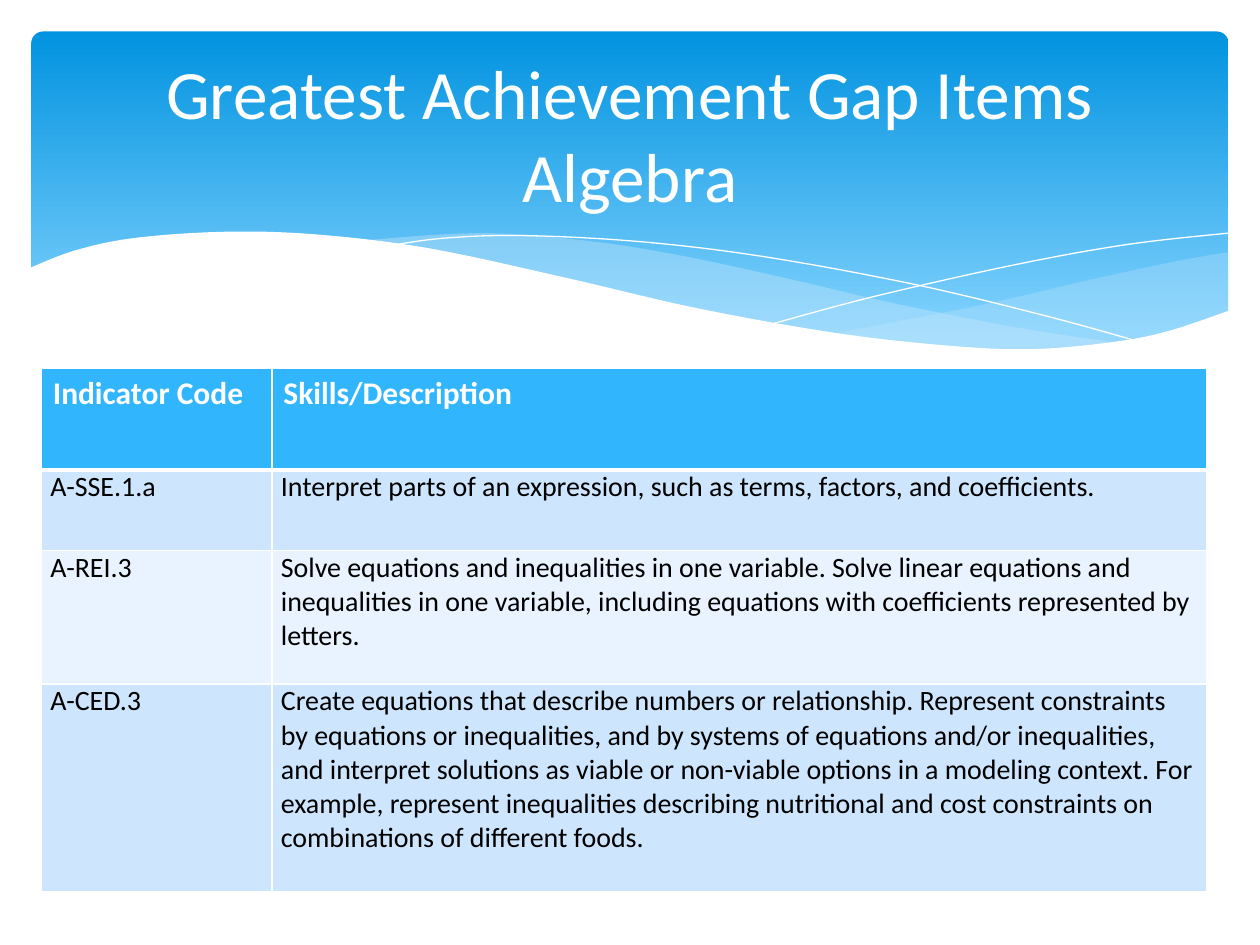
from pptx import Presentation
from pptx.dml.color import RGBColor
from pptx.enum.shapes import MSO_SHAPE
from pptx.enum.text import MSO_ANCHOR, PP_ALIGN
from pptx.oxml.ns import qn
from pptx.util import Inches, Pt
from lxml.etree import SubElement

WIDE, HIGH = 10, 7.5
FONT = "Calibri"
WHITE, BLACK, PALE = "FFFFFF", "000000", "C6E7FC"
HEAD, BANDS = "31B6FD", ("CEE5FE", "E8F3FF")
TITLE = ("Greatest Achievement Gap Items", "Algebra")
ROWS = [
    ("Indicator Code", "Skills/Description"),
    ("A-SSE.1.a", "Interpret parts of an expression, such as terms, factors, and coefficients."),
    ("A-REI.3", "Solve equations and inequalities in one variable. Solve linear equations and "
                "inequalities in one variable, including equations with coefficients "
                "represented by letters."),
    ("A-CED.3", "Create equations that describe numbers or relationship. Represent constraints "
                "by equations or inequalities, and by systems of equations and/or inequalities, "
                "and interpret solutions as viable or non-viable options in a modeling context. "
                "For example, represent inequalities describing nutritional and cost constraints "
                "on combinations of different foods."),
]
COLS = (1.83, 7.42)
TALL = (0.81, 0.64, 1.06, 1.65)

FILLS = [
    (PALE, 29, [
        [(9.76, 2), (9.35, 2.07), (8.61, 2.23), (7.79, 2.42), (6.61, 2.65)],
        [(6.61, 2.65), (7.19, 2.72), (8.03, 2.78), (8.81, 2.73), (9.35, 2.62), (9.76, 2.47)]]),
    (PALE, 40, [
        [(8.93, 2.73), (8.07, 2.6), (7.06, 2.4), (6.29, 2.22), (5.41, 2.03), (4.65, 1.91),
         (3.8, 1.85), (2.86, 1.91)],
        [(2.86, 1.91), (3.62, 2.03), (4.49, 2.22), (5.66, 2.48), (6.5, 2.64), (7.22, 2.74),
         (8.07, 2.78), (8.93, 2.73)]]),
]
LINES = [
    [(3.09, 1.95), (3.53, 1.89), (4.16, 1.87), (5.1, 1.92), (6.08, 2.04), (7.27, 2.26),
     (8.31, 2.51), (9.07, 2.72)],
    [(6.13, 2.57), (6.95, 2.35), (8.06, 2.1), (8.95, 1.94), (9.75, 1.85)],
]
FRONT = (WHITE, 100, [
    [(0.23, 2.13), (0.59, 1.99), (1.06, 1.89), (1.77, 1.84), (2.5, 1.86), (3.4, 1.97),
     (4.47, 2.2), (5.55, 2.45), (6.68, 2.65), (7.61, 2.75), (8.23, 2.77), (8.87, 2.71),
     (9.3, 2.62), (9.77, 2.46)],
    [(9.77, 3.29), (0.23, 3.29)]])


def tint(code):
    return RGBColor.from_string(code)


def smooth(knots, steps=6):
    if len(knots) < 3:
        return knots
    ends = [knots[0], *knots, knots[-1]]
    curve = [knots[0]]
    for a, b, c, d in zip(ends, ends[1:], ends[2:], ends[3:]):
        for n in range(1, steps + 1):
            t = n / steps
            curve.append(tuple(
                (2 * q + (r - p) * t + (2 * p - 5 * q + 4 * r - s) * t ** 2
                 + (3 * q - p - 3 * r + s) * t ** 3) / 2
                for p, q, r, s in zip(a, b, c, d)))
    return curve


def outline(slide, edges, close):
    dots = [(Inches(x), Inches(y)) for edge in edges for x, y in smooth(edge)]
    pen = slide.shapes.build_freeform(*dots[0])
    pen.add_line_segments(dots[1:], close=close)
    shape = pen.convert_to_shape()
    shape.shadow.inherit = False
    return shape


def wave(slide, code, alpha, edges):
    shape = outline(slide, edges, True)
    shape.line.fill.background()
    shape.fill.solid()
    shape.fill.fore_color.rgb = tint(code)
    if alpha < 100:
        mark = shape.fill._xPr.find(".//" + qn("a:srgbClr"))
        SubElement(mark, qn("a:alpha"), val=str(alpha * 1000))


def thread(slide, knots):
    shape = outline(slide, [knots], False)
    shape.fill.background()
    shape.line.color.rgb = tint(WHITE)
    shape.line.width = Pt(0)


def banner(slide):
    edge = WIDE / 40
    shape = slide.shapes.add_shape(
        MSO_SHAPE.ROUNDED_RECTANGLE, Inches(edge), Inches(edge),
        Inches(WIDE - 2 * edge), Inches(HIGH * 0.36))
    shape.adjustments[0] = 0.034
    shape.shadow.inherit = False
    shape.line.fill.background()
    shape.fill.gradient()
    shape.fill.gradient_angle = 270
    for stop, place, code in zip(shape.fill.gradient_stops, (0, 0.9), ("0293E0", "83D3FE")):
        stop.position = place
        stop.color.rgb = tint(code)


def write(para, text, size, code, bold=False):
    run = para.add_run()
    run.text = text
    run.font.name, run.font.size, run.font.bold = FONT, Pt(size), bold
    run.font.color.rgb = tint(code)


def border(cell, widths):
    props = cell._tc.get_or_add_tcPr()
    for side, width in zip("LRTB", widths):
        line = SubElement(props, qn("a:ln" + side), w=str(Pt(width)))
        paint = SubElement(line, qn("a:solidFill"))
        SubElement(paint, qn("a:srgbClr"), val=WHITE)


def grid(slide):
    table = slide.shapes.add_table(
        len(ROWS), len(COLS), Inches(0.33), Inches(2.92),
        Inches(sum(COLS)), Inches(sum(TALL))).table
    for col, width in zip(table.columns, COLS):
        col.width = Inches(width)
    for i, texts in enumerate(ROWS):
        table.rows[i].height = Inches(TALL[i])
        top = i == 0
        for j, text in enumerate(texts):
            cell = table.cell(i, j)
            border(cell, (1, 1, 3 if i == 1 else 1, 3 if top else 1))
            cell.fill.solid()
            cell.fill.fore_color.rgb = tint(HEAD if top else BANDS[(i - 1) % 2])
            cell.margin_left = cell.margin_right = Inches(0.09 if top else 0.07)
            cell.margin_top = cell.margin_bottom = Inches(0.05 if top else 0)
            write(cell.text_frame.paragraphs[0], text, 18 if top else 16,
                  WHITE if top else BLACK, top)


def title(slide):
    frame = slide.shapes.add_textbox(
        Inches(WIDE * 0.05), Inches(0.37), Inches(WIDE * 0.9), Inches(1.37)).text_frame
    frame.word_wrap = True
    frame.vertical_anchor = MSO_ANCHOR.MIDDLE
    para = frame.paragraphs[0]
    para.alignment = PP_ALIGN.CENTER
    for n, text in enumerate(TITLE):
        if n:
            para.add_line_break()
        write(para, text, 39.6, WHITE)


def main():
    deck = Presentation()
    deck.slide_width, deck.slide_height = Inches(WIDE), Inches(HIGH)
    slide = deck.slides.add_slide(deck.slide_layouts[6])
    banner(slide)
    for item in FILLS:
        wave(slide, *item)
    for knots in LINES:
        thread(slide, knots)
    wave(slide, *FRONT)
    grid(slide)
    title(slide)
    deck.save("out.pptx")


if __name__ == "__main__":
    main()
